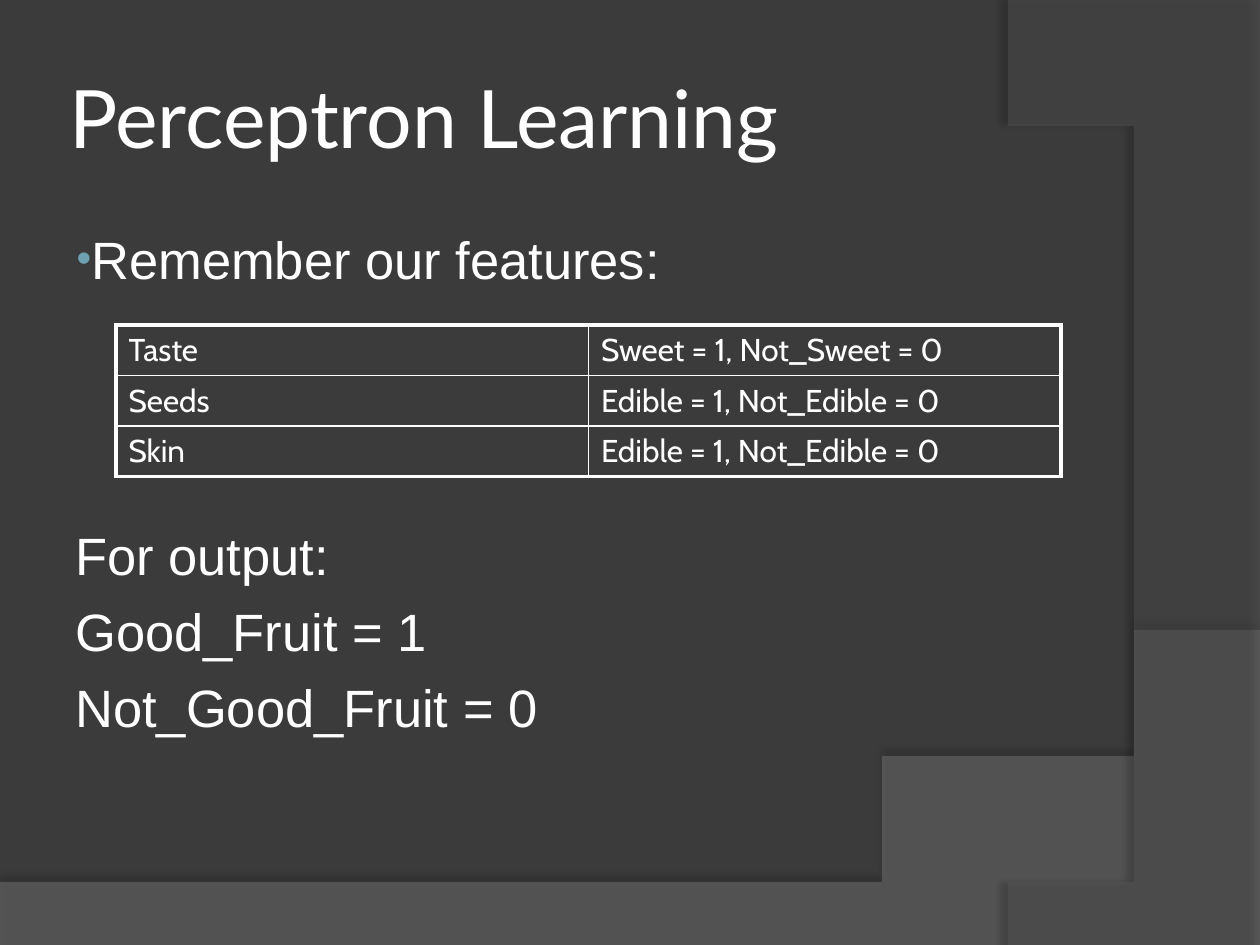
from lxml.etree import SubElement
from pptx import Presentation
from pptx.dml.color import RGBColor
from pptx.enum.text import MSO_ANCHOR as Anchor
from pptx.oxml.ns import qn
from pptx.util import Emu, Inches, Pt

WIDTH, HEIGHT = 10, 7.5
LEFT, TEXT_WIDTH = 0.05 * WIDTH, 8.17
COLORS = {
    "background": "3B3B3B",
    "hill": "7C7C7C",
    "arc": "595959",
    "shadow": "000000",
    "text": "FFFFFF",
    "bullet": "6EA0B0",
}
FEATURES = [
    ("Taste", "Sweet = 1, Not_Sweet = 0"),
    ("Seeds", "Edible = 1, Not_Edible = 0"),
    ("Skin", "Edible = 1, Not_Edible = 0"),
]
# Text and space before in points; the large gap leaves room for the table
BODY = [
    ("Remember our features:", 4),
    ("For output:", 133.5),
    ("Good_Fruit = 1", 7.4),
    ("Not_Good_Fruit = 0", 7.4),
]
OUTER, INNER = 2.25, 1


def rgb(name):
    return RGBColor.from_string(COLORS[name])


def add_color(parent, name, opacity=100):
    color = SubElement(parent, qn("a:srgbClr"), val=COLORS[name])
    if opacity < 100:
        SubElement(color, qn("a:alpha"), val=str(opacity * 1000))


def curve(start, control_1, control_2, end, steps=60):
    """Points along a cubic Bezier curve."""
    points = []
    for step in range(steps + 1):
        t = step / steps
        weights = ((1 - t) ** 3, 3 * t * (1 - t) ** 2, 3 * t * t * (1 - t), t ** 3)
        corners = (start, control_1, control_2, end)
        points.append(tuple(
            sum(w * corner[axis] for w, corner in zip(weights, corners))
            for axis in (0, 1)))
    return points


def add_wave(slide, points, color, opacity, shadow):
    """Translucent outline; shadow is opacity, blur, distance, direction."""
    builder = slide.shapes.build_freeform(*points[0], scale=Inches(1))
    builder.add_line_segments(points[1:], close=True)
    shape = builder.convert_to_shape()
    shape.line.fill.background()
    shape.fill.solid()
    shape.fill.fore_color.rgb = rgb(color)
    properties = shape.element.spPr
    fill_color = properties.find(qn("a:solidFill")).find(qn("a:srgbClr"))
    SubElement(fill_color, qn("a:alpha"), val=str(opacity * 1000))
    shadow_opacity, blur, distance, direction = shadow
    effects = SubElement(properties, qn("a:effectLst"))
    outer = SubElement(
        effects, qn("a:outerShdw"), blurRad=str(Pt(blur)), dist=str(Pt(distance)),
        dir=str(direction * 60000), algn="ctr", rotWithShape="0")
    add_color(outer, "shadow", shadow_opacity)


def style_font(paragraph, name, size):
    paragraph.font.name = name
    paragraph.font.size = Pt(size)
    paragraph.font.color.rgb = rgb("text")


def add_text_box(slide, top, height, side_margin, anchor):
    box = slide.shapes.add_textbox(
        Inches(LEFT), Inches(top), Inches(TEXT_WIDTH), Inches(height))
    frame = box.text_frame
    frame.word_wrap = True
    frame.vertical_anchor = anchor
    frame.margin_left = frame.margin_right = Inches(side_margin)
    return frame


def add_bullet(paragraph):
    properties = paragraph._p.get_or_add_pPr()
    properties.set("marL", "0")
    properties.set("indent", str(Inches(0.01)))
    add_color(SubElement(properties, qn("a:buClr")), "bullet")
    SubElement(properties, qn("a:buSzPct"), val="80000")
    SubElement(properties, qn("a:buFont"), typeface="Arial")
    SubElement(properties, qn("a:buChar"), char="•")


def add_body(slide):
    frame = add_text_box(slide, 1.75, 4.95, 0.1, Anchor.TOP)
    for index, (text, gap) in enumerate(BODY):
        paragraph = frame.paragraphs[0] if index == 0 else frame.add_paragraph()
        paragraph.text = text
        paragraph.space_before = Pt(gap)
        if index == 0:
            add_bullet(paragraph)
        style_font(paragraph, "Arial", 30)


def set_borders(cell, widths):
    """Widths in points for left, right, top and bottom."""
    properties = cell._tc.get_or_add_tcPr()
    for index, (side, width) in enumerate(zip("LRTB", widths)):
        line = SubElement(properties, qn("a:ln" + side), w=str(Pt(width)))
        add_color(SubElement(line, qn("a:solidFill")), "text")
        properties.insert(index, line)


def add_feature_table(slide):
    rows, columns = len(FEATURES), len(FEATURES[0])
    table = slide.shapes.add_table(
        rows, columns, Inches(0.92), Inches(2.58),
        Inches(0.75 * WIDTH), Inches(0.4 * rows)).table
    table.first_row = table.horz_banding = False
    for r, values in enumerate(FEATURES):
        for c, value in enumerate(values):
            cell = table.cell(r, c)
            cell.text = value
            cell.fill.background()
            style_font(cell.text_frame.paragraphs[0], "Cabin", 18)
            on_edge = (c == 0, c == columns - 1, r == 0, r == rows - 1)
            set_borders(cell, [OUTER if edge else INNER for edge in on_edge])


def main():
    presentation = Presentation()
    presentation.slide_width = Inches(WIDTH)
    presentation.slide_height = Inches(HEIGHT)
    slide = presentation.slides.add_slide(presentation.slide_layouts[6])
    slide.background.fill.solid()
    slide.background.fill.fore_color.rgb = rgb("background")

    # Background waves
    hill = curve((WIDTH, 5.2), (5.59, 7.29), (3.91, 7.19), (0, 7.05))
    add_wave(slide, [(0, 7.51), (WIDTH, 7.51)] + hill, "hill", 45, (35, 4, 3.5, 270))
    arc = curve((8.21, HEIGHT), (9.35, 6.19), (10.18, 3), (8, 0))
    add_wave(slide, [(WIDTH, 0.02), (WIDTH, HEIGHT)] + arc, "arc", 40, (45, 4, 4, 180))

    # Title
    title = add_text_box(slide, 0.3, 1.25, 0.05, Anchor.MIDDLE).paragraphs[0]
    title.text = "Perceptron Learning"
    style_font(title, "Lato", 46)

    # Body text and feature table
    add_body(slide)
    add_feature_table(slide)
    presentation.save("out.pptx")


if __name__ == "__main__":
    main()
